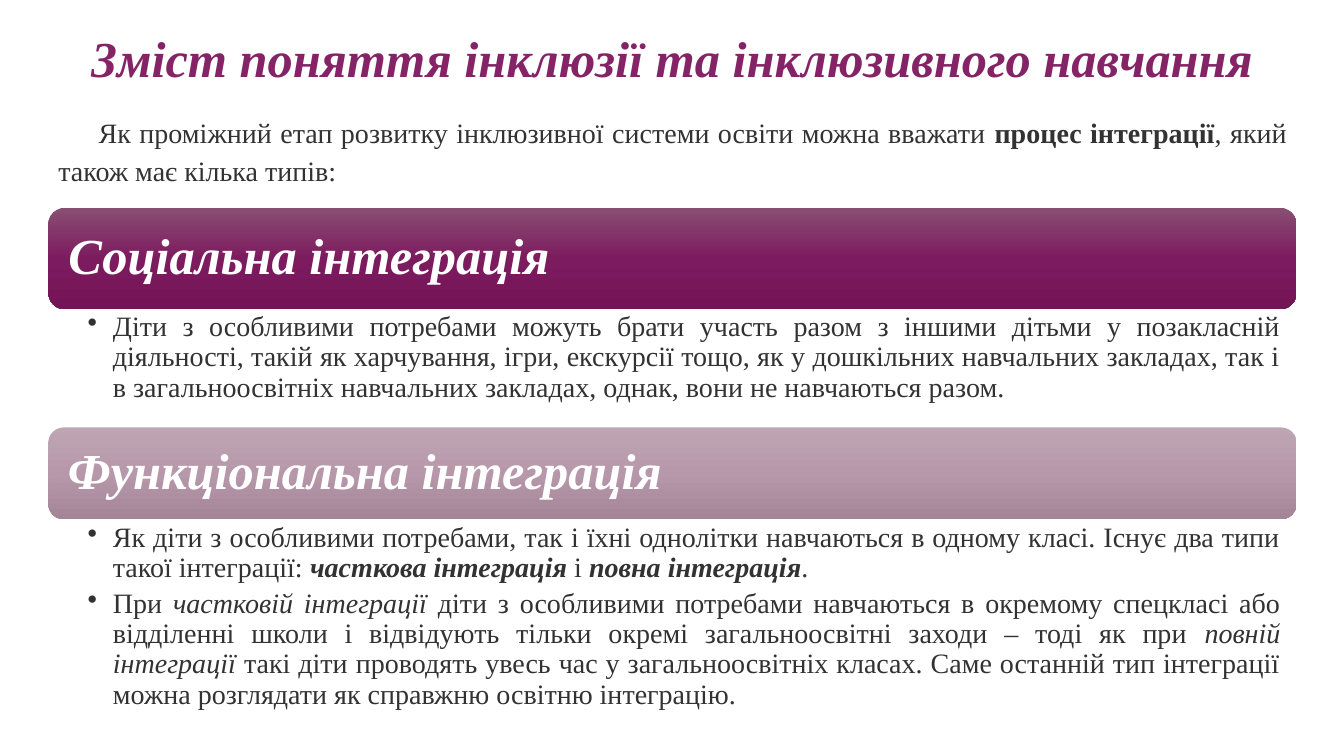
import copy

import pptx
import pptx.dml.color
import pptx.enum.shapes
import pptx.enum.text
import pptx.oxml
import pptx.oxml.ns
import pptx.util
from pptx.util import Inches

RGBColor = pptx.dml.color.RGBColor
ALIGN = pptx.enum.text.PP_ALIGN
ANCHOR = pptx.enum.text.MSO_ANCHOR

FONT = "Times New Roman"
PLUM = RGBColor(0x85, 0x23, 0x67)
DARK = RGBColor(0x32, 0x32, 0x32)
WHITE = RGBColor(0xFF, 0xFF, 0xFF)
STRONG_GRADIENT = (RGBColor(0x89, 0x4F, 0x73), RGBColor(0x7D, 0x1B, 0x5F), RGBColor(0x73, 0x14, 0x56))
PALE_GRADIENT = (RGBColor(0xBE, 0xA5, 0xB3), RGBColor(0xB7, 0x98, 0xAA), RGBColor(0xA4, 0x85, 0x97))

LEFT, WIDTH = 0.48, 12.38

TITLE = "Зміст поняття інклюзії та інклюзивного навчання"
INTRO = [
    ("Як проміжний етап розвитку інклюзивної системи освіти можна вважати ", ""),
    ("процес інтеграції", "b"),
    (", який також має кілька типів:", ""),
]
SOCIAL = [[
    ("Діти з особливими потребами можуть брати участь разом з іншими дітьми у позакласній "
     "діяльності, такій як харчування, ігри, екскурсії тощо, як у дошкільних навчальних закладах, "
     "так і в загальноосвітніх навчальних закладах, однак, вони не навчаються разом.", ""),
]]
FUNCTIONAL = [
    [
        ("Як діти з особливими потребами, так і їхні однолітки навчаються в одному класі. "
         "Існує два типи такої інтеграції: ", ""),
        ("часткова інтеграція ", "bi"),
        ("і ", ""),
        ("повна інтеграція", "bi"),
        (".", ""),
    ],
    [
        ("При ", ""),
        ("частковій інтеграції ", "i"),
        ("діти з особливими потребами навчаються в окремому спецкласі або відділенні школи і "
         "відвідують тільки окремі загальноосвітні заходи – тоді як при ", ""),
        ("повній інтеграції ", "i"),
        ("такі діти проводять увесь час у загальноосвітніх класах. Саме останній тип інтеграції "
         "можна розглядати як справжню освітню інтеграцію.", ""),
    ],
]


def set_font(font, size, color):
    font.name = FONT
    font.size = pptx.util.Pt(size)
    font.color.rgb = color


def add_runs(paragraph, runs):
    """Add (text, style) runs; style holds b for bold and i for italic."""
    for text, style in runs:
        run = paragraph.add_run()
        run.text = text
        if "b" in style:
            run.font.bold = True
        if "i" in style:
            run.font.italic = True


def set_indent(paragraph, margin, first_line):
    properties = paragraph._p.get_or_add_pPr()
    properties.set("marL", str(Inches(margin)))
    properties.set("indent", str(Inches(first_line)))
    return properties


def add_bullet(paragraph):
    properties = set_indent(paragraph, 0.25, -0.25)
    bullet = pptx.oxml.parse_xml(f'<a:buChar {pptx.oxml.ns.nsdecls("a")} char="•"/>')
    properties.append(bullet)


def add_text_box(slide, top, height):
    box = slide.shapes.add_textbox(Inches(LEFT), Inches(top), Inches(WIDTH), Inches(height))
    box.text_frame.word_wrap = True
    return box.text_frame


def write_heading(paragraph, text, color, alignment):
    paragraph.text = text
    paragraph.alignment = alignment
    paragraph.line_spacing = 0.9
    set_font(paragraph.font, 36, color)
    paragraph.font.bold = True
    paragraph.font.italic = True


def add_title(slide):
    frame = add_text_box(slide, 0.28, 0.65)
    frame.vertical_anchor = ANCHOR.BOTTOM
    write_heading(frame.paragraphs[0], TITLE, PLUM, ALIGN.CENTER)


def add_intro(slide):
    frame = add_text_box(slide, 1.05, 0.84)
    frame.auto_size = pptx.enum.text.MSO_AUTO_SIZE.SHAPE_TO_FIT_TEXT
    paragraph = frame.paragraphs[0]
    paragraph.alignment = ALIGN.JUSTIFY
    paragraph.line_spacing = 1.14
    set_indent(paragraph, 0, 0.4)
    set_font(paragraph.font, 20, DARK)
    add_runs(paragraph, INTRO)


def fill_vertical_gradient(fill, colors):
    """Fill from top to bottom with three evenly spaced colours."""
    fill.gradient()
    fill.gradient_angle = 270
    stop_list = fill._fill._gradFill.gsLst
    stop_list.insert(1, copy.deepcopy(stop_list[0]))
    for index, (stop, color) in enumerate(zip(fill.gradient_stops, colors)):
        stop.position = index / 2
        stop.color.rgb = color


def add_banner(slide, top, height, text, colors):
    banner = slide.shapes.add_shape(
        pptx.enum.shapes.MSO_SHAPE.ROUNDED_RECTANGLE,
        Inches(LEFT), Inches(top), Inches(WIDTH), Inches(height))
    banner.shadow.inherit = False
    banner.line.fill.background()
    fill_vertical_gradient(banner.fill, colors)
    frame = banner.text_frame
    frame.word_wrap = True
    frame.vertical_anchor = ANCHOR.MIDDLE
    # The rounded corners already push the text in by 0.05 inches.
    frame.margin_left = frame.margin_right = Inches(0.15)
    write_heading(frame.paragraphs[0], text, WHITE, ALIGN.JUSTIFY)


def add_bullet_list(slide, top, height, items):
    frame = add_text_box(slide, top, height)
    frame.margin_left, frame.margin_right = Inches(0.39), Inches(0.16)
    frame.margin_top = frame.margin_bottom = Inches(0.03)
    for index, runs in enumerate(items):
        paragraph = frame.add_paragraph() if index else frame.paragraphs[0]
        paragraph.alignment = ALIGN.JUSTIFY
        paragraph.line_spacing = 0.9
        paragraph.space_after = pptx.util.Pt(4)
        add_bullet(paragraph)
        set_font(paragraph.font, 20, DARK)
        add_runs(paragraph, runs)


def main():
    presentation = pptx.Presentation()
    presentation.slide_width = Inches(13.33)
    presentation.slide_height = Inches(7.5)
    slide = presentation.slides.add_slide(presentation.slide_layouts[6])

    add_title(slide)
    add_intro(slide)
    add_banner(slide, 2.06, 1.01, "Соціальна інтеграція", STRONG_GRADIENT)
    add_bullet_list(slide, 3.07, 1.18, SOCIAL)
    add_banner(slide, 4.24, 0.91, "Функціональна інтеграція", PALE_GRADIENT)
    add_bullet_list(slide, 5.16, 1.88, FUNCTIONAL)

    presentation.save("out.pptx")


if __name__ == "__main__":
    main()
